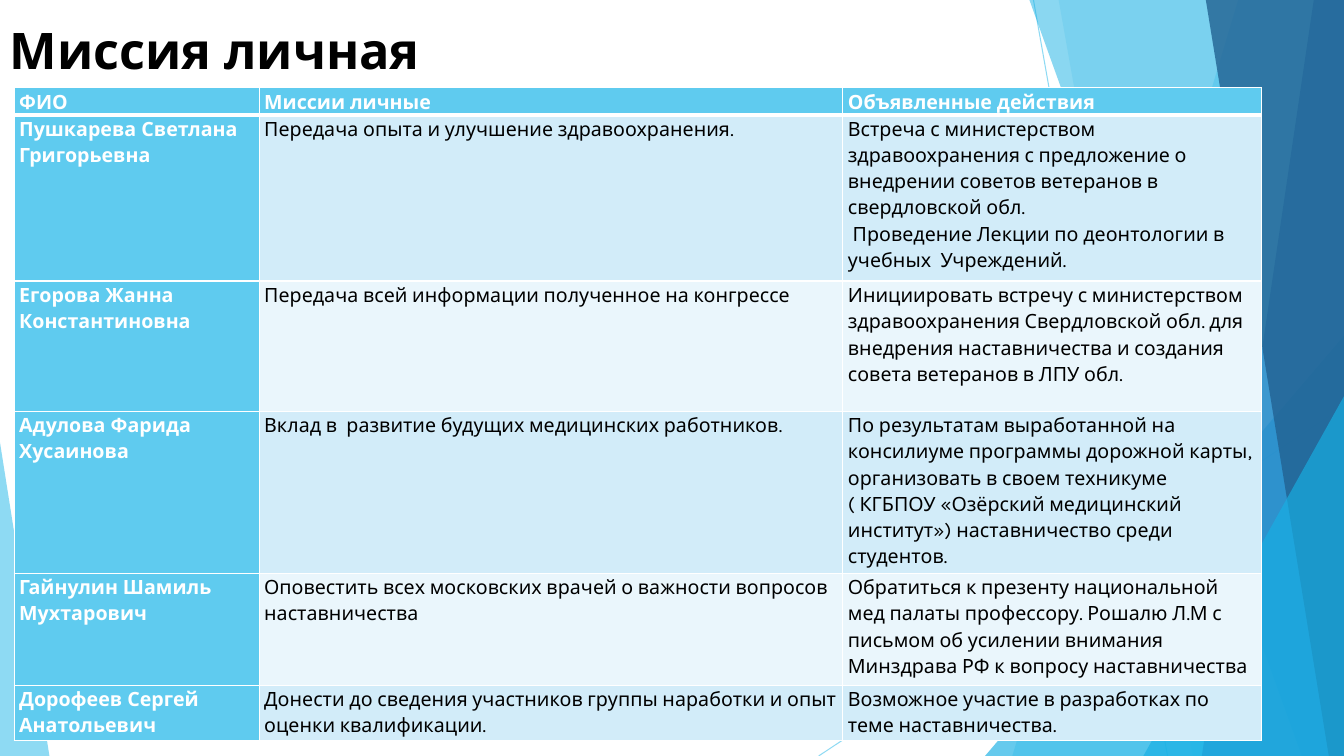
from lxml.etree import SubElement
from pptx import Presentation
from pptx.dml.color import RGBColor as RGB
from pptx.enum.shapes import MSO_CONNECTOR as CONN, MSO_SHAPE as SHAPE
from pptx.oxml.ns import qn
from pptx.util import Inches, Pt

WHITE = RGB(0xFF, 0xFF, 0xFF)
BLACK = RGB(0x00, 0x00, 0x00)
SKY = RGB(0x5F, 0xCB, 0xEF)
CYAN = RGB(0x17, 0xB0, 0xE4)
BLUE = RGB(0x2E, 0x83, 0xC3)
NAVY = RGB(0x22, 0x62, 0x92)
BANDS = [RGB(0xEA, 0xF6, 0xFC), RGB(0xD2, 0xEC, 0xF9)]
W, H = 13.33, 7.5

prs = Presentation()
prs.slide_width, prs.slide_height = Inches(W), Inches(H)
s = prs.slides.add_slide(prs.slide_layouts[6])
shapes = s.shapes


def slab(top_x, bottom_x):
    """Full-height panel between a slanted left edge and the right slide edge."""
    pen = shapes.build_freeform(Inches(top_x), 0)
    pen.add_line_segments([(Inches(x), Inches(y)) for x, y in
                           [(W, 0), (W, H), (bottom_x, H)]])
    return pen.convert_to_shape()


def wedge(left, top, width, apex):
    """Triangle standing on the bottom slide edge."""
    sp = shapes.add_shape(SHAPE.ISOSCELES_TRIANGLE, Inches(left), Inches(top),
                          Inches(width), Inches(H - top))
    sp.adjustments[0] = apex
    return sp


# Thin background lines
for x1, y1, x2 in [(10.25, 0, 11.58), (W, 4.03, 8.12)]:
    cn = shapes.add_connector(CONN.STRAIGHT, Inches(x1), Inches(y1), Inches(x2), Inches(H))
    cn.line.color.rgb, cn.line.width = SKY, Pt(0.75)
    color = cn.line.fill._xPr.find(".//" + qn("a:srgbClr"))
    SubElement(color, qn("a:alpha"), val="70000")
    SubElement(cn._element.spPr, qn("a:effectLst"))

# Translucent panels, back to front
for sp, rgb, alpha in [
    (slab(12.28, 10.04), SKY, 36),
    (slab(10.5, 11.83), SKY, 20),
    (wedge(9.77, 3.33, 3.56, 1), CYAN, 66),
    (slab(10.21, 12.91), CYAN, 50),
    (slab(13.03, 11.92), BLUE, 70),
    (slab(11.96, 13.18), NAVY, 80),
    (wedge(11.34, 3.93, 1.99, 1), CYAN, 66),
    (wedge(0, 4.39, 0.49, 0), SKY, 70),
]:
    sp.shadow.inherit = False
    sp.line.fill.background()
    sp.fill.solid()
    sp.fill.fore_color.rgb = rgb
    color = sp._element.spPr.find(qn("a:solidFill"))[0]
    SubElement(color, qn("a:alpha"), val=str(alpha * 1000))

# Title
tf = shapes.add_textbox(0, Inches(0.14), Inches(9.4), Inches(1.44)).text_frame
tf.word_wrap = True
r = tf.paragraphs[0].add_run()
r.text = "Миссия личная"
r.font.color.rgb = BLACK
for key, value in {"name": "Karla", "size": Pt(36), "bold": True}.items():
    setattr(r.font, key, value)

# Table of missions
ROWS = [
    ("ФИО", "Миссии личные", "Объявленные действия"),
    ("Пушкарева Светлана Григорьевна",
     "Передача опыта и улучшение здравоохранения.",
     "Встреча с министерством здравоохранения с предложение о внедрении "
     "советов ветеранов в свердловской обл.\n"
     " Проведение Лекции по деонтологии в учебных  Учреждений."),
    ("Егорова Жанна Константиновна",
     "Передача всей информации полученное на конгрессе",
     "Инициировать встречу с министерством здравоохранения Свердловской обл. "
     "для внедрения наставничества и создания совета ветеранов в ЛПУ обл."),
    ("Адулова Фарида Хусаинова",
     "Вклад в  развитие будущих медицинских работников.",
     "По результатам выработанной на консилиуме программы дорожной карты, "
     "организовать в своем техникуме ( КГБПОУ «Озёрский медицинский институт») "
     "наставничество среди студентов."),
    ("Гайнулин Шамиль Мухтарович",
     "Оповестить всех московских врачей о важности вопросов наставничества",
     "Обратиться к презенту национальной мед палаты профессору. Рошалю Л.М с "
     "письмом об усилении внимания Минздрава РФ к вопросу наставничества"),
    ("Дорофеев Сергей Анатольевич",
     "Донести до сведения участников группы наработки и опыт оценки квалификации.",
     "Возможное участие в разработках по теме наставничества."),
]
COL_WIDTHS = [2.43, 5.79, 4.15]
ROW_HEIGHTS = [0.26, 1.65, 1.29, 1.48, 1.11, 0.55]
MARGINS = {"margin_left": Inches(0.05), "margin_right": Inches(0.05),
           "margin_top": 0, "margin_bottom": 0}

table = shapes.add_table(len(ROWS), len(COL_WIDTHS), Inches(0.14), Inches(0.87),
                         Inches(sum(COL_WIDTHS)), Inches(sum(ROW_HEIGHTS))).table
for col, width in zip(table.columns, COL_WIDTHS):
    col.width = Inches(width)
for row, height in zip(table.rows, ROW_HEIGHTS):
    row.height = Inches(height)

for i, texts in enumerate(ROWS):
    for j, text in enumerate(texts):
        cell = table.cell(i, j)
        heading = i == 0 or j == 0
        for key, value in MARGINS.items():
            setattr(cell, key, value)
        # White borders, thicker under the header row
        tcPr = cell._tc.get_or_add_tcPr()
        for side in ("lnL", "lnR", "lnT", "lnB"):
            thick = (i, side) in [(0, "lnB"), (1, "lnT")]
            ln = SubElement(tcPr, qn("a:" + side), w=str(Pt(3 if thick else 1)))
            SubElement(SubElement(ln, qn("a:solidFill")), qn("a:srgbClr"), val=str(WHITE))
        cell.fill.solid()
        cell.fill.fore_color.rgb = SKY if heading else BANDS[i % 2]
        cell.text = text
        for p in cell.text_frame.paragraphs:
            p.line_spacing = 1.15
            for r in p.runs:
                r.font.color.rgb = WHITE if heading else BLACK
                for key, value in {"name": "Karla", "size": Pt(14), "bold": heading}.items():
                    setattr(r.font, key, value)

prs.save("out.pptx")
